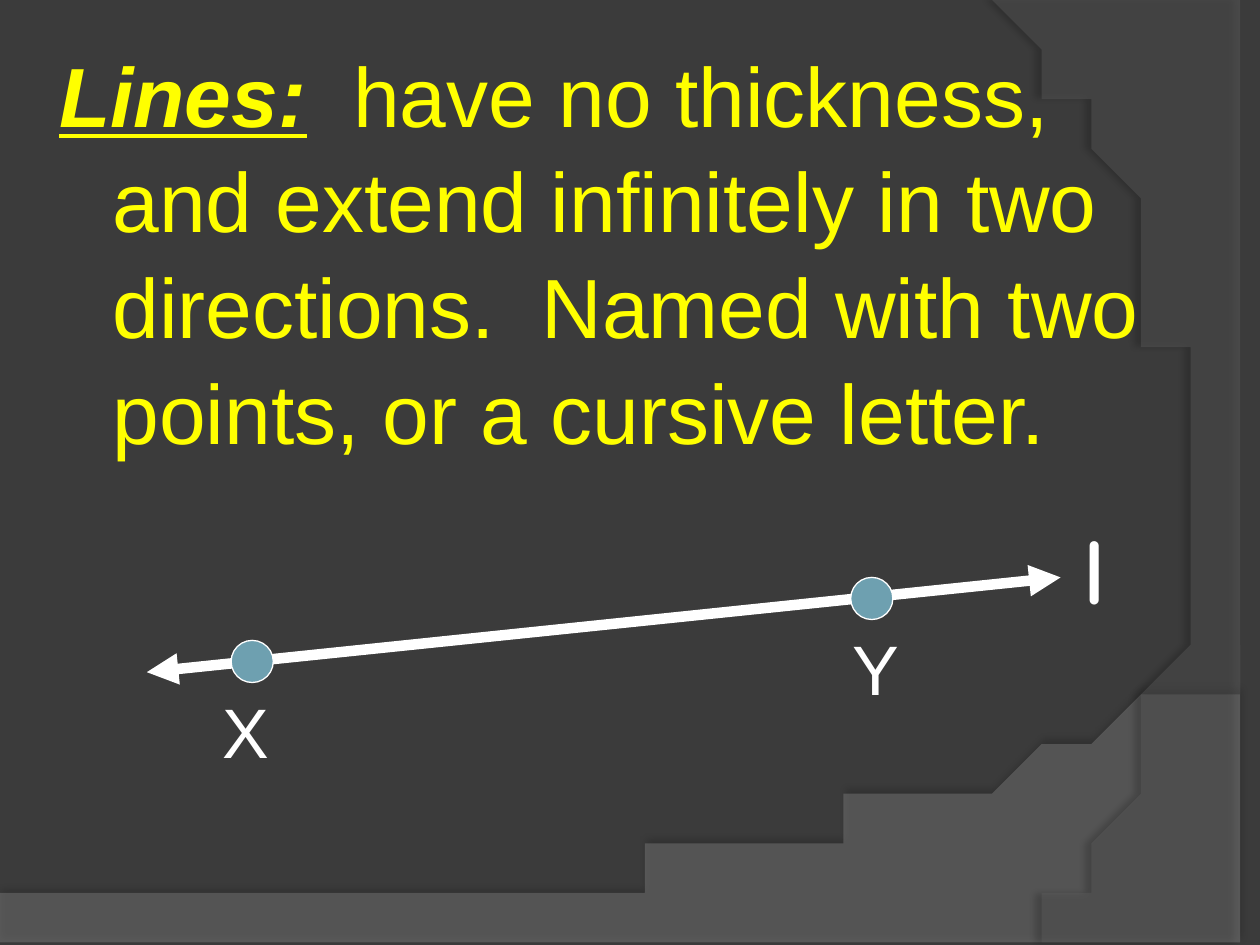
"""Builds a geometry slide that defines lines, with line XY as the example."""
import pptx
import pptx.util
import pptx.dml.color
import pptx.enum.shapes
import pptx.oxml
import pptx.oxml.ns
import lxml.etree

Cm, Pt = pptx.util.Cm, pptx.util.Pt
RGBColor = pptx.dml.color.RGBColor
qn = pptx.oxml.ns.qn
DARK = RGBColor(0x3B, 0x3B, 0x3B)
GREY = RGBColor(0x7F, 0x7F, 0x7F)
DIM = RGBColor(0x5E, 0x5E, 0x5E)
YELLOW = RGBColor(0xFF, 0xFF, 0x00)
WHITE = RGBColor(0xFF, 0xFF, 0xFF)
BLUE = RGBColor(0x6E, 0xA0, 0xB0)


def add_node(parent, tag, **attrs):
    node = lxml.etree.SubElement(parent, qn(tag))
    for key, value in attrs.items():
        node.set(key, str(value))
    return node


def bend(start, pull, push, end, steps=40):
    points = []
    for step in range(1, steps + 1):
        t = step / steps
        u = 1 - t
        points.append(tuple(
            u**3 * a + 3 * u * u * t * b + 3 * u * t * t * c + t**3 * d
            for a, b, c, d in zip(start, pull, push, end)))
    return points


deck = pptx.Presentation()
deck.slide_width, deck.slide_height = Cm(25.4), Cm(19.05)
slide = deck.slides.add_slide(deck.slide_layouts[1])
slide.background.fill.solid()
slide.background.fill.fore_color.rgb = DARK
shapes = slide.shapes
title = shapes.title._element
title.getparent().remove(title)

waves = [
    ([(0, 17.91), (0, 19.05), (25.4, 19.05), (25.4, 13.21)],
     [(14.2, 18.52), (9.93, 18.26), (0, 17.91)], GREY, 45, 35, 3.5, 270),
    ([(25.4, 0.05), (25.4, 19.05), (20.85, 19.05)],
     [(23.75, 15.72), (25.86, 7.62), (20.32, 0)], DIM, 40, 45, 4, 180),
]
for edge, curve, color, alpha, shade, gap, angle in waves:
    path = shapes.build_freeform(*edge[0], scale=Cm(1))
    path.add_line_segments(edge[1:] + bend(edge[-1], *curve), close=True)
    wave = path.convert_to_shape()
    wave.fill.solid()
    wave.fill.fore_color.rgb = color
    wave.line.fill.background()
    wave.shadow.inherit = False
    props = wave._element.spPr
    add_node(props.find(".//" + qn("a:srgbClr")), "a:alpha", val=alpha * 1000)
    cast = add_node(props.find(qn("a:effectLst")), "a:outerShdw", blurRad=Pt(4),
                    dist=Pt(gap), dir=angle * 60000, algn="ctr", rotWithShape=0)
    black = add_node(cast, "a:srgbClr", val="000000")
    add_node(black, "a:alpha", val=shade * 1000)

body = slide.placeholders[1]
body.left, body.top, body.width, body.height = Cm(0.84), Cm(0.64), Cm(23.7), Cm(11.43)
shapes._spTree.append(body._element)
para = body.text_frame.paragraphs[0]
para.font.name, para.font.size = "Arial", Pt(48)
para.font.color.rgb = YELLOW
para.space_before = Pt(4)
para.line_spacing = 1.05
term = para.add_run()
term.text = "Lines:"
term.font.bold = term.font.italic = term.font.underline = True
para.add_run().text = ("  have no thickness, and extend infinitely in two directions."
                       "  Named with two points, or a cursive letter.")
props = para._p.get_or_add_pPr()
props.set("marL", str(Cm(1.17)))
props.set("indent", str(Cm(-1.07)))
none = pptx.oxml.parse_xml("<a:buNone %s/>" % pptx.oxml.ns.nsdecls("a"))
props.find(qn("a:defRPr")).addprevious(none)

line = shapes.add_connector(pptx.enum.shapes.MSO_CONNECTOR.STRAIGHT,
                            Cm(2.96), Cm(13.55), Cm(21.38), Cm(11.64))
line.line.color.rgb = WHITE
line.line.width = Pt(6)
for end in ("a:headEnd", "a:tailEnd"):
    add_node(line.line._ln, end, type="triangle")
add_node(line._element.spPr, "a:effectLst")

for left, top in ((4.66, 12.91), (17.15, 11.64)):
    dot = shapes.add_shape(pptx.enum.shapes.MSO_SHAPE.OVAL,
                           Cm(left), Cm(top), Cm(0.85), Cm(0.85))
    dot.shadow.inherit = False
    dot.fill.solid()
    dot.fill.fore_color.rgb = BLUE
    dot.line.color.rgb = WHITE
    dot.line.width = Pt(0.75)

labels = [
    ("X", 4.23, 13.76, 3.18, 1.96, "Arial", 40, False),
    ("Y", 16.93, 12.49, 3.18, 1.96, "Arial", 40, False),
    ("l", 21.59, 10.16, 2.75, 2.54, "Comic Neue", 54, True),
]
for text, left, top, width, height, face, size, bold in labels:
    label = shapes.add_textbox(Cm(left), Cm(top), Cm(width), Cm(height))
    label.text_frame.word_wrap = True
    para = label.text_frame.paragraphs[0]
    para.text = text
    para.space_before = Pt(4)
    para.font.name, para.font.size, para.font.bold = face, Pt(size), bold
    para.font.color.rgb = WHITE

deck.save("out.pptx")
